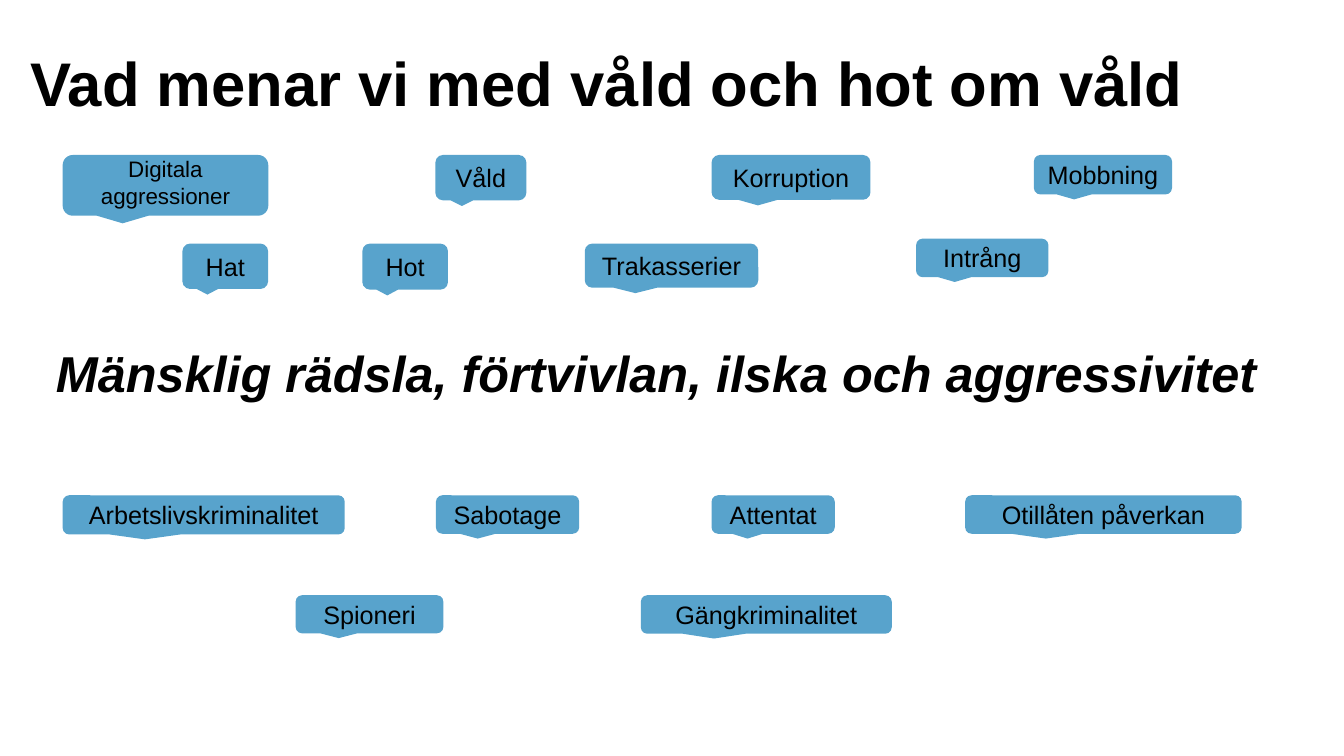
from pptx import Presentation
from pptx.dml.color import RGBColor
from pptx.enum.shapes import MSO_SHAPE
from pptx.enum.text import MSO_ANCHOR as ANCHOR, PP_ALIGN as ALIGN
from pptx.util import Pt

TITLE = "Vad menar vi med våld och hot om våld"
MESSAGE = "Mänsklig rädsla, förtvivlan, ilska och aggressivitet"
BLUE, BLACK = "58A3CC", "000000"

# (row top, [(word, left, width, height), ...]) in points
CALLOUT_ROWS = [
    (110.7, [("Digitala aggressioner", 44.8, 146.9, 43.4), ("Våld", 311, 65, 32.4),
             ("Korruption", 508.3, 113.5, 32), ("Mobbning", 738.5, 98.7, 28.2)]),
    (174, [("Hat", 130.3, 61.2, 32.4), ("Hot", 258.8, 61.2, 32.9),
           ("Trakasserier", 417.7, 123.9, 31.5)]),
    (170.5, [("Intrång", 654.4, 94.5, 27.5)]),
    (353.8, [("Arbetslivskriminalitet", 44.8, 201.5, 28), ("Sabotage", 311.4, 102.3, 27.5),
             ("Attentat", 508.3, 88, 27.5), ("Otillåten påverkan", 689.4, 197.5, 27.5)]),
    (425.2, [("Spioneri", 211.2, 105.5, 27.2), ("Gängkriminalitet", 457.8, 179.2, 27.5)]),
]
# Words whose type size and bottom inset differ from the rest
TWO_LINES = {"Digitala aggressioner": (16, 8)}


def rgb(value):
    return RGBColor.from_string(value)


def write(shape, text, anchor, align, insets, **font):
    tf = shape.text_frame
    left, top, right, bottom = map(Pt, insets)
    frame = dict(word_wrap=True, vertical_anchor=anchor, margin_left=left,
                 margin_top=top, margin_right=right, margin_bottom=bottom)
    for name, value in frame.items():
        setattr(tf, name, value)
    p = tf.paragraphs[0]
    p.alignment = align
    r = p.add_run()
    r.text = text
    font["size"] = Pt(font["size"])
    for name, value in dict(name="Arial", **font).items():
        setattr(r.font, name, value)
    r.font.color.rgb = rgb(BLACK)


def add_callout(s, text, box, fill=None, bottom=3.6, **font):
    sp = s.shapes.add_shape(MSO_SHAPE.ROUNDED_RECTANGULAR_CALLOUT, *map(Pt, box))
    sp.shadow.inherit = False
    sp.line.fill.background()
    if fill:
        sp.fill.solid()
        sp.fill.fore_color.rgb = rgb(fill)
    else:
        sp.fill.background()
    write(sp, text, ANCHOR.MIDDLE, ALIGN.CENTER, (7.2, 3.6, 7.2, bottom), **font)


def main():
    prs = Presentation()
    prs.slide_width, prs.slide_height = Pt(960), Pt(540)
    s = prs.slides.add_slide(prs.slide_layouts[6])

    title = s.shapes.add_textbox(*map(Pt, (21.6, 28, 917.3, 56.9)))
    write(title, TITLE, ANCHOR.BOTTOM, ALIGN.LEFT, (0, 0, 0, 0), size=44, bold=True)

    for top, words in CALLOUT_ROWS:
        for word, left, width, height in words:
            size, bottom = TWO_LINES.get(word, (18, 3.6))
            add_callout(s, word, (left, top, width, height), BLUE, bottom, size=size)

    add_callout(s, MESSAGE, (14.4, 242, 909.4, 48.2), size=36, bold=True, italic=True)
    prs.save("out.pptx")


if __name__ == "__main__":
    main()
